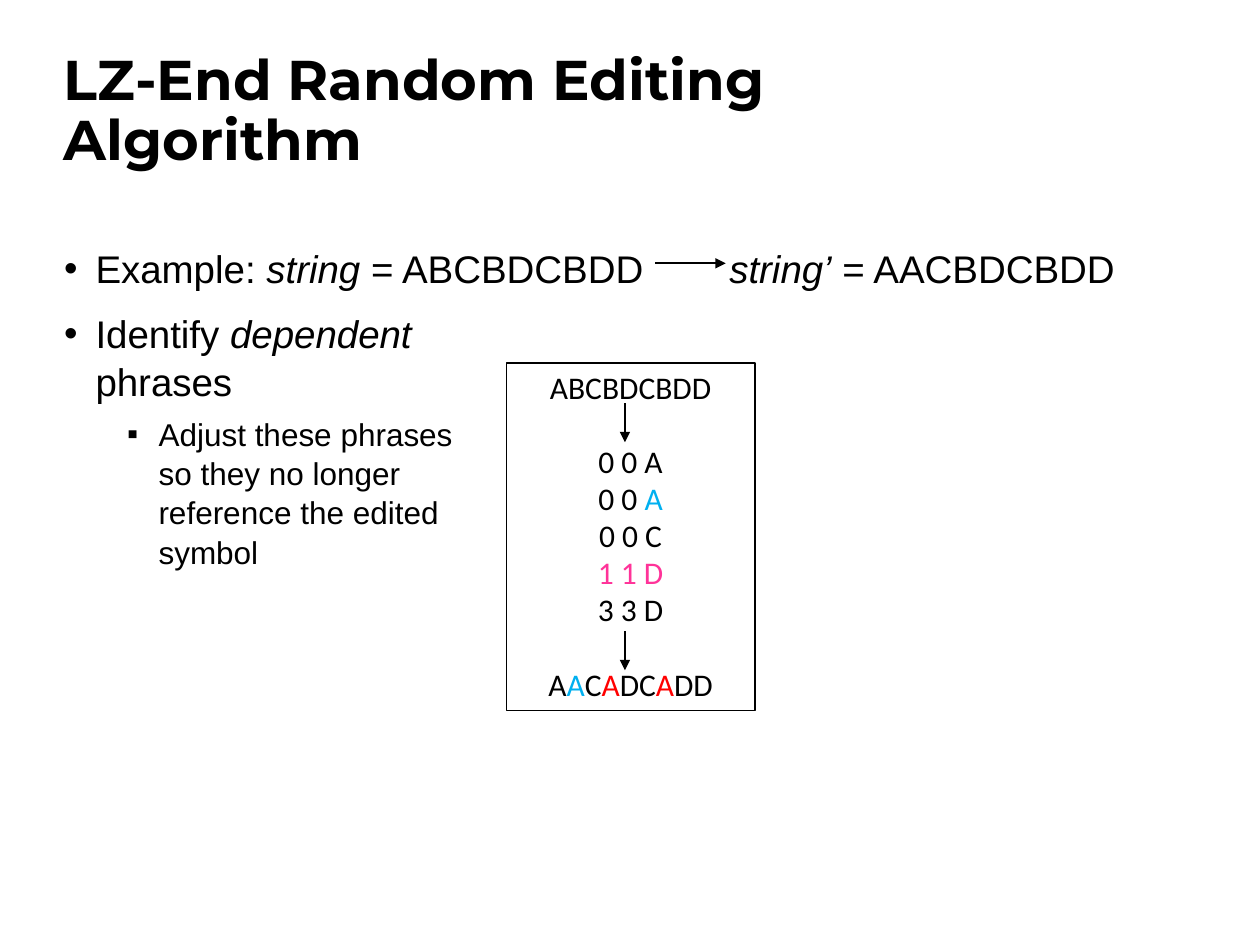
from typing import NamedTuple

from lxml import etree
from pptx import Presentation
from pptx.dml import color as col
from pptx.enum import shapes, text
from pptx.oxml import ns
from pptx.util import Inches, Pt


class Theme:
    ink = "000000"
    edit = "00B0F0"
    ref = "FF3399"
    error = "FF0000"
    head, body, code = "Montserrat", "Arial", "Calibri"
    large, mid, small = 32, 22, 18
    rule = 1


class Run(NamedTuple):
    words: str
    color: str = Theme.ink
    slant: bool = False
    bold: bool = False


class Para(NamedTuple):
    runs: list[Run]
    font: str = Theme.body
    size: float = Theme.mid
    before: float = 0
    lead: float = 1.04
    bullet: str = ""
    margin: float = 0.25
    align: text.PP_ALIGN = text.PP_ALIGN.LEFT


class Arrow(NamedTuple):
    x1: float
    y1: float
    x2: float
    y2: float


def mark(para, sign: str, margin: float) -> None:
    props = para._p.get_or_add_pPr()
    props.set("marL", str(Inches(margin)))
    props.set("indent", str(Inches(-0.25)))
    etree.SubElement(props, ns.qn("a:buFont"), typeface="Arial")
    etree.SubElement(props, ns.qn("a:buChar"), char=sign)


def write(frame, paras: list[Para], anchor=text.MSO_ANCHOR.TOP) -> None:
    frame.word_wrap = True
    frame.vertical_anchor = anchor
    for i, item in enumerate(paras):
        para = frame.add_paragraph() if i else frame.paragraphs[0]
        if item.bullet:
            mark(para, item.bullet, item.margin)
        para.alignment = item.align
        para.line_spacing = item.lead
        para.space_before = Pt(item.before)
        para.font.size = Pt(item.size)
        para.font.name = item.font
        for part in item.runs:
            for j, line in enumerate(part.words.split("\n")):
                if j:
                    para.add_line_break()
                if not line:
                    continue
                run = para.add_run()
                run.text = line
                font = run.font
                font.name, font.size = item.font, Pt(item.size)
                font.bold, font.italic = part.bold, part.slant
                font.color.rgb = col.RGBColor.from_string(part.color)


def label(slide, x: float, y: float, w: float, h: float,
          paras: list[Para], anchor=text.MSO_ANCHOR.TOP) -> None:
    box = slide.shapes.add_textbox(Inches(x), Inches(y), Inches(w), Inches(h))
    write(box.text_frame, paras, anchor)


def stroke(line) -> None:
    line.color.rgb = col.RGBColor.from_string(Theme.ink)
    line.width = Pt(Theme.rule)


def point(slide, a: Arrow) -> None:
    line = slide.shapes.add_connector(
        shapes.MSO_CONNECTOR.STRAIGHT,
        Inches(a.x1), Inches(a.y1), Inches(a.x2), Inches(a.y2))
    stroke(line.line)
    etree.SubElement(line.line._get_or_add_ln(), ns.qn("a:tailEnd"), type="triangle")
    etree.SubElement(line._element.spPr, ns.qn("a:effectLst"))


def code(*runs: Run, before: float = 0) -> Para:
    return Para(list(runs), Theme.code, Theme.small, before, 0.98,
                align=text.PP_ALIGN.CENTER)


def main() -> None:
    deck = Presentation()
    deck.slide_width, deck.slide_height = Inches(10), Inches(7.5)
    slide = deck.slides.add_slide(deck.slide_layouts[6])

    # Title
    label(slide, 0.41, 0.22, 6.53, 1.2,
          [Para([Run("LZ-End Random Editing Algorithm", bold=True)],
                Theme.head, Theme.large, lead=0.9)],
          text.MSO_ANCHOR.BOTTOM)

    # Bullets, with the edited string to the right of the arrow
    label(slide, 0.41, 1.88, 8.62, 4.76, [
        Para([Run("Example: "), Run("string", slant=True), Run(" = ABCBDCBDD")],
             bullet="•"),
        Para([Run("Identify "), Run("dependent \n", slant=True), Run("phrases")],
             before=10, bullet="•"),
        Para([Run("Adjust these phrases \nso they no longer \n"
                  "reference the edited \nsymbol")],
             size=Theme.small, before=5, bullet="▪", margin=0.75),
    ])
    label(slide, 5.69, 1.88, 3.34, 0.5,
          [Para([Run("string’", slant=True), Run(" = AACBDCBDD")])])

    # Encoding panel
    panel = slide.shapes.add_shape(
        shapes.MSO_SHAPE.RECTANGLE,
        Inches(4.02), Inches(2.88), Inches(1.97), Inches(2.76))
    panel.shadow.inherit = False
    panel.fill.background()
    stroke(panel.line)
    gap = 21.5
    write(panel.text_frame, [
        code(Run("ABCBDCBDD")),
        code(Run("0 0 A"), before=gap),
        code(Run("0 0 "), Run("A", Theme.edit)),
        code(Run("0 0 C")),
        code(Run("1 1 D", Theme.ref)),
        code(Run("3 3 D")),
        code(Run("A"), Run("A", Theme.edit), Run("C"), Run("A", Theme.error),
             Run("DC"), Run("A", Theme.error), Run("DD"), before=gap),
    ], text.MSO_ANCHOR.MIDDLE)

    # Arrows
    for y in (3.2, 5.01):
        point(slide, Arrow(4.96, y, 4.96, y + 0.31))
    point(slide, Arrow(5.2, 2.09, 5.76, 2.09))

    deck.save("out.pptx")


if __name__ == "__main__":
    main()
